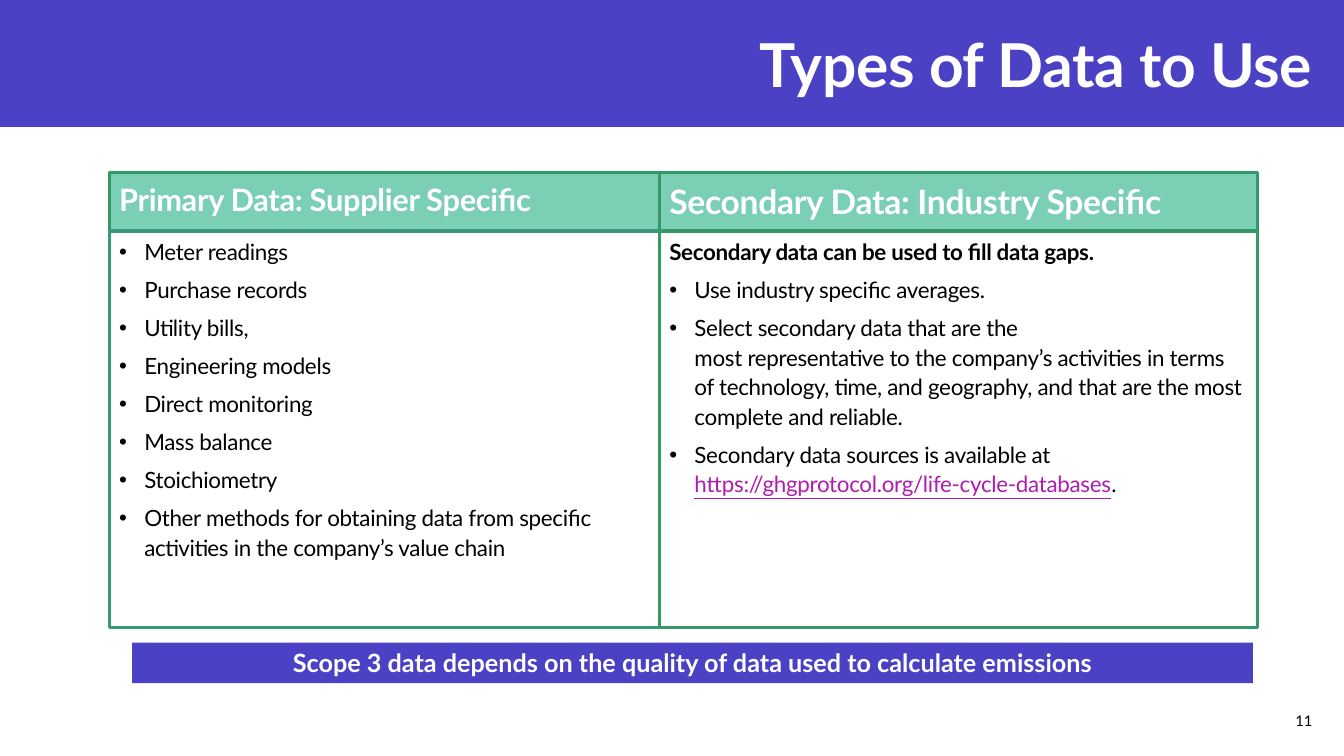
from dataclasses import dataclass

from lxml.etree import SubElement
from pptx import Presentation
from pptx.dml.color import RGBColor
from pptx.enum.shapes import MSO_SHAPE
from pptx.enum.text import MSO_ANCHOR, MSO_AUTO_SIZE, PP_ALIGN
from pptx.oxml.ns import qn
from pptx.util import Pt


@dataclass(frozen=True)
class Theme:
    font: str = "Lato"
    purple: str = "4A41C5"
    mint: str = "7ACFB5"
    green: str = "339966"
    teal: str = "37997B"
    white: str = "FFFFFF"
    black: str = "000000"
    link: str = "AF1DAF"
    title_size: float = 43.2
    primary_head_size: float = 22
    secondary_head_size: float = 24
    body_size: float = 16
    banner_size: float = 18
    number_size: float = 10.5


THEME = Theme()
TIGHT = "-20"  # letter spacing, hundredths of a point

# Slide and comparison grid, in points
PAGE_WIDTH, PAGE_HEIGHT = 960, 540
GRID_TOP, HEAD_HEIGHT, BODY_HEIGHT = 123, 42, 283
PRIMARY_LEFT, SECONDARY_LEFT, GRID_RIGHT = 78, 471, 898

LINK = "https://ghgprotocol.org/life-cycle-databases"
PRIMARY_ITEMS = [
    "Meter readings",
    "Purchase records",
    "Utility bills,",
    "Engineering models",
    "Direct monitoring",
    "Mass balance",
    "Stoichiometry",
    "Other methods for obtaining data from specific\n"
    "activities in the company’s value chain",
]
SECONDARY_LEAD = "Secondary data can be used to fill data gaps."
SECONDARY_ITEMS = [
    "Use industry specific averages.",
    "Select secondary data that are the\nmost representative to the company’s "
    "activities in terms of technology, time, and geography, and that are the "
    "most complete and reliable.",
    f"Secondary data sources is available at\n{LINK}.",
]


def color(code):
    return RGBColor.from_string(code)


def style(para, size, code, bold=False, align=PP_ALIGN.LEFT, tight=True):
    para.alignment = align
    font = para.font
    font.name, font.size, font.bold = THEME.font, Pt(size), bold
    font.color.rgb = color(code)
    if tight:
        para._p.pPr.find(qn("a:defRPr")).set("spc", TIGHT)


def add_panel(page, left, top, width, height, fill=None, line=None):
    box = page.shapes.add_shape(MSO_SHAPE.RECTANGLE, Pt(left), Pt(top), Pt(width), Pt(height))
    box.shadow.inherit = False
    if fill:
        box.fill.solid()
        box.fill.fore_color.rgb = color(fill)
    else:
        box.fill.background()
    if line:
        box.line.color.rgb = color(line)
        box.line.width = Pt(2.25)
    else:
        box.line.fill.background()
    box.text_frame.word_wrap = True
    box.text_frame.vertical_anchor = MSO_ANCHOR.TOP
    return box


def add_bullet(para):
    properties = para._p.get_or_add_pPr()
    properties.set("marL", str(Pt(18)))
    properties.set("indent", str(-Pt(18)))
    SubElement(properties, qn("a:buFont")).set("typeface", "Arial")
    SubElement(properties, qn("a:buChar")).set("char", "•")


def add_text(para, text):
    """Write text with line breaks, marking the web address as a link."""
    before, address, after = text.partition(LINK)
    para.text = before
    if address:
        span = para.add_run()
        span.text = address
        span.font.underline = True
        span.font.color.rgb = color(THEME.link)
        para.add_run().text = after


def add_column(page, left, right, head, head_size, items, line, lead=None):
    width = right - left
    # Heading
    box = add_panel(page, left, GRID_TOP, width, HEAD_HEIGHT, THEME.mint, THEME.green)
    para = box.text_frame.paragraphs[0]
    para.text = head
    para.line_spacing = 1.1
    style(para, head_size, THEME.white, bold=True)
    # Body
    box = add_panel(page, left, GRID_TOP + HEAD_HEIGHT, width, BODY_HEIGHT, line=line)
    frame = box.text_frame
    texts = [lead, *items] if lead else items
    for index, text in enumerate(texts):
        para = frame.add_paragraph() if index else frame.paragraphs[0]
        is_lead = text == lead
        para.line_spacing = 1.1
        para.space_before = Pt(6 if index else 0)
        if not is_lead:
            add_bullet(para)
        add_text(para, text)
        style(para, THEME.body_size, THEME.black, bold=is_lead)


def set_title(page, text):
    title = page.shapes.title
    title.left, title.top, title.width, title.height = Pt(154), Pt(14.4), Pt(790.5), Pt(61.2)
    frame = title.text_frame
    frame.auto_size = MSO_AUTO_SIZE.NONE
    frame.vertical_anchor = MSO_ANCHOR.MIDDLE
    frame.text = text
    style(frame.paragraphs[0], THEME.title_size, THEME.white, True, PP_ALIGN.RIGHT)


def add_banner(page, text):
    box = add_panel(page, 94.3, 459, 800.6, 29, THEME.purple)
    para = box.text_frame.paragraphs[0]
    para.text = text
    style(para, THEME.banner_size, THEME.white, True, PP_ALIGN.CENTER, tight=False)


def add_page_number(page, number):
    box = page.shapes.add_textbox(Pt(895), Pt(500.4), Pt(49.5), Pt(28.8))
    frame = box.text_frame
    frame.word_wrap = True
    frame.vertical_anchor = MSO_ANCHOR.MIDDLE
    para = frame.paragraphs[0]
    para.text = number
    style(para, THEME.number_size, THEME.black, align=PP_ALIGN.RIGHT, tight=False)


def main():
    deck = Presentation()
    deck.slide_width, deck.slide_height = Pt(PAGE_WIDTH), Pt(PAGE_HEIGHT)
    page = deck.slides.add_slide(deck.slide_layouts[5])

    # Title band, kept behind the title
    band = add_panel(page, 0, 0, PAGE_WIDTH, 90.6, THEME.purple)
    page.shapes.title._element.addprevious(band._element)
    set_title(page, "Types of Data to Use")

    # Comparison columns
    add_column(page, PRIMARY_LEFT, SECONDARY_LEFT, "Primary Data: Supplier Specific",
               THEME.primary_head_size, PRIMARY_ITEMS, THEME.teal)
    add_column(page, SECONDARY_LEFT, GRID_RIGHT, "Secondary Data: Industry Specific",
               THEME.secondary_head_size, SECONDARY_ITEMS, THEME.green, SECONDARY_LEAD)

    # Takeaway and page number
    add_banner(page, "Scope 3 data depends on the quality of data used to calculate emissions")
    add_page_number(page, "11")
    deck.save("out.pptx")


if __name__ == "__main__":
    main()
